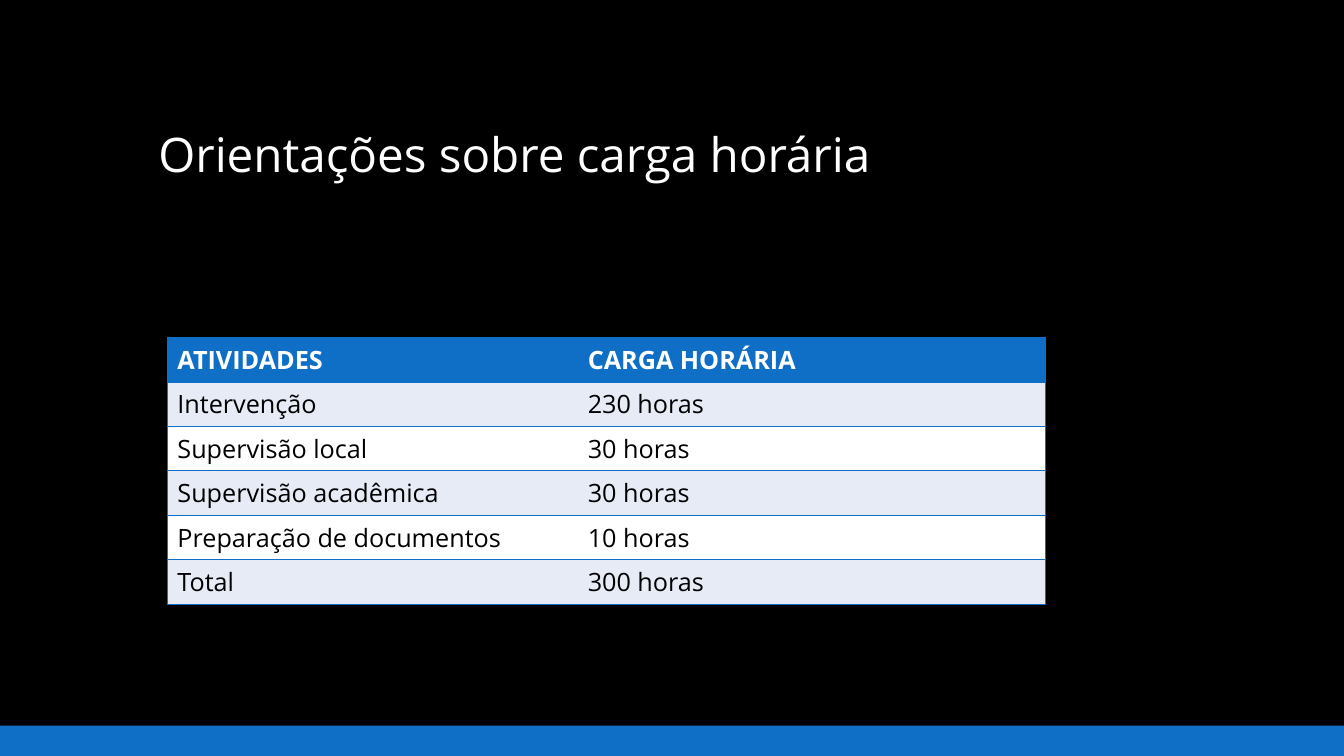
from typing import NamedTuple

from lxml import etree
from pptx import Presentation
from pptx.dml.color import RGBColor
from pptx.enum.shapes import MSO_SHAPE
from pptx.enum.text import MSO_ANCHOR, MSO_AUTO_SIZE, PP_ALIGN
from pptx.oxml.ns import qn
from pptx.slide import Slide
from pptx.table import _Cell
from pptx.util import Inches, Pt

RECTANGLE = MSO_SHAPE.RECTANGLE
BOTTOM = MSO_ANCHOR.BOTTOM
NO_AUTOFIT = MSO_AUTO_SIZE.NONE
LEFT = PP_ALIGN.LEFT

FONT = "Open Sans"
COLORS = {
    "background": "000000",
    "accent": "0F6FC6",
    "band": "E7EBF5",
    "light": "FFFFFF",
    "dark": "000000",
}
COLUMN_WIDTHS = (4.07, 4.64)
ROW_HEIGHT = 0.41


class WorkloadRow(NamedTuple):
    activity: str
    hours: str


WORKLOAD = (
    WorkloadRow("ATIVIDADES", "CARGA HORÁRIA"),
    WorkloadRow("Intervenção", "230 horas"),
    WorkloadRow("Supervisão local", "30 horas"),
    WorkloadRow("Supervisão acadêmica", "30 horas"),
    WorkloadRow("Preparação de documentos", "10 horas"),
    WorkloadRow("Total", "300 horas"),
)


def rgb(name: str) -> RGBColor:
    return RGBColor.from_string(COLORS[name])


def set_borders(cell: _Cell, open_side: str) -> None:
    """Draw accent borders on every side except open_side; call before filling."""
    properties = cell._tc.get_or_add_tcPr()
    for side in ("lnL", "lnR", "lnT", "lnB"):
        line = etree.SubElement(properties, qn(f"a:{side}"), w=str(Pt(1)))
        if side == open_side:
            etree.SubElement(line, qn("a:noFill"))
        else:
            fill = etree.SubElement(line, qn("a:solidFill"))
            etree.SubElement(fill, qn("a:srgbClr"), val=COLORS["accent"])


def add_footer_band(slide: Slide) -> None:
    band = slide.shapes.add_shape(
        RECTANGLE, 0, Inches(7.2), Inches(13.33), Inches(0.3))
    band.shadow.inherit = False
    band.fill.solid()
    band.fill.fore_color.rgb = rgb("accent")
    band.line.fill.background()


def format_title(slide: Slide, text: str) -> None:
    title = slide.shapes.title
    title.left, title.top = Inches(1.47), Inches(0.51)
    title.width, title.height = Inches(10.4), Inches(1.35)
    frame = title.text_frame
    frame.text = text
    frame.word_wrap = True
    frame.auto_size = NO_AUTOFIT
    frame.vertical_anchor = BOTTOM
    paragraph = frame.paragraphs[0]
    paragraph.alignment = LEFT
    paragraph.line_spacing = 0.9
    paragraph.font.name = FONT
    paragraph.font.size = Pt(34)
    paragraph.font.color.rgb = rgb("light")


def add_workload_table(slide: Slide) -> None:
    table = slide.shapes.add_table(
        len(WORKLOAD), len(COLUMN_WIDTHS), Inches(1.66), Inches(3.35),
        Inches(sum(COLUMN_WIDTHS)), Inches(ROW_HEIGHT * len(WORKLOAD))).table
    for column, width in zip(table.columns, COLUMN_WIDTHS):
        column.width = Inches(width)
    for row_index, entry in enumerate(WORKLOAD):
        table.rows[row_index].height = Inches(ROW_HEIGHT)
        is_header = row_index == 0
        fill = "accent" if is_header else "band" if row_index % 2 else "light"
        for column_index, text in enumerate(entry):
            cell = table.cell(row_index, column_index)
            set_borders(cell, "lnL" if column_index else "lnR")
            cell.fill.solid()
            cell.fill.fore_color.rgb = rgb(fill)
            cell.text = text
            font = cell.text_frame.paragraphs[0].font
            font.name = FONT
            font.size = Pt(18)
            font.bold = is_header
            font.color.rgb = rgb("light" if is_header else "dark")


def main() -> None:
    presentation = Presentation()
    presentation.slide_width = Inches(13.33)
    presentation.slide_height = Inches(7.5)
    slide = presentation.slides.add_slide(
        presentation.slide_layouts.get_by_name("Title Only"))
    slide.background.fill.solid()
    slide.background.fill.fore_color.rgb = rgb("background")
    add_footer_band(slide)
    format_title(slide, "Orientações sobre carga horária")
    add_workload_table(slide)
    presentation.save("out.pptx")


if __name__ == "__main__":
    main()
